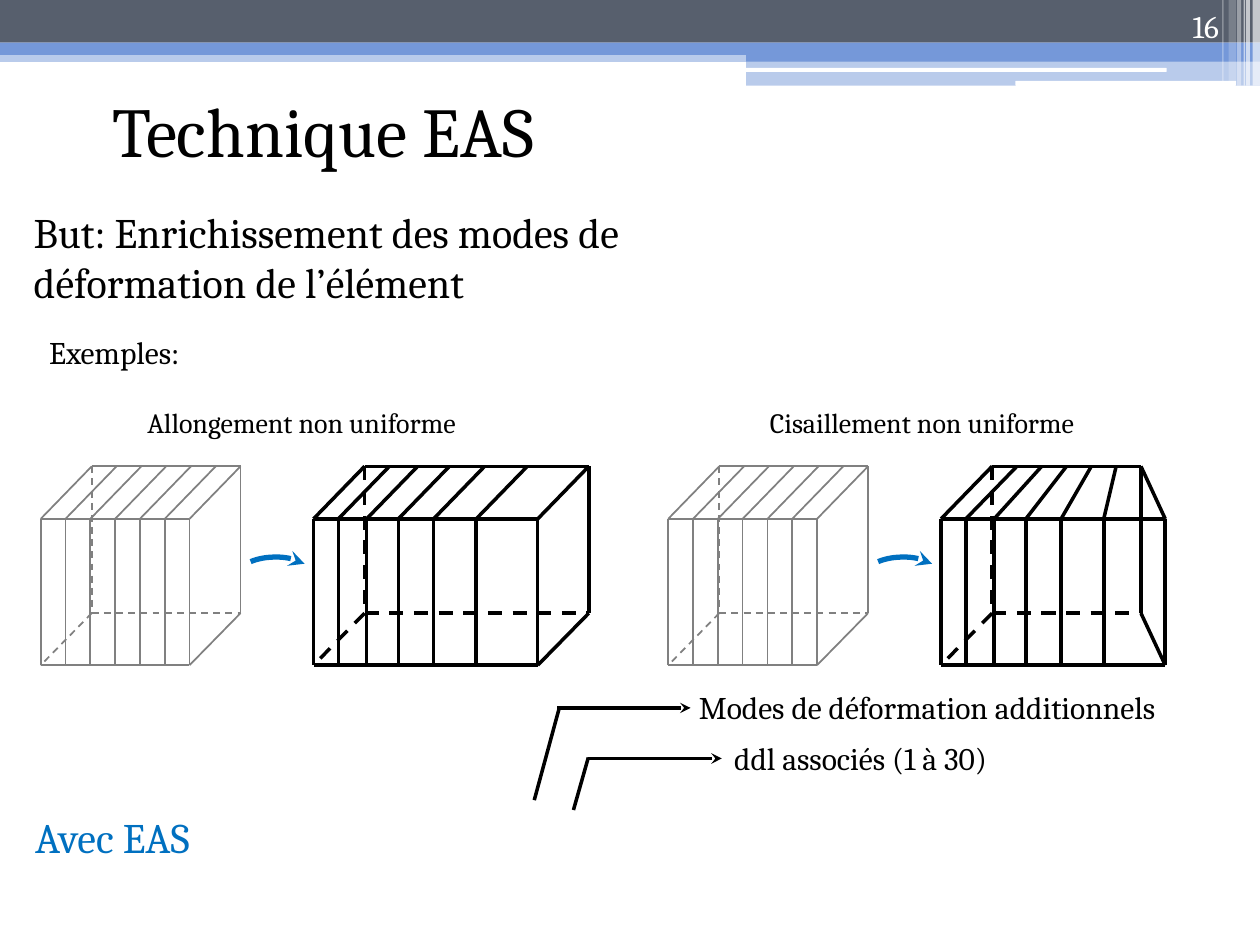
"""Build a slide on how the EAS technique enriches element deformation modes."""
import lxml.etree
import pptx
import pptx.dml.color
import pptx.enum.dml
import pptx.enum.shapes
import pptx.enum.text
import pptx.oxml
import pptx.oxml.ns
import pptx.util

Cm = pptx.util.Cm
Pt = pptx.util.Pt
RGBColor = pptx.dml.color.RGBColor
SHAPE = pptx.enum.shapes.MSO_SHAPE
STRAIGHT = pptx.enum.shapes.MSO_CONNECTOR.STRAIGHT
ANCHOR = pptx.enum.text.MSO_ANCHOR
ALIGN = pptx.enum.text.PP_ALIGN
qn = pptx.oxml.ns.qn

BLACK = RGBColor(0x00, 0x00, 0x00)
WHITE = RGBColor(0xFF, 0xFF, 0xFF)
GREY = RGBColor(0x80, 0x80, 0x80)
SLATE = RGBColor(0x57, 0x5F, 0x6D)
SKY = RGBColor(0x75, 0x98, 0xD9)
BLUE = RGBColor(0x00, 0x70, 0xC0)

presentation = pptx.Presentation()
presentation.slide_width = Cm(25.4)
presentation.slide_height = Cm(19.05)
slide = presentation.slides.add_slide(presentation.slide_layouts[6])


def write(text, left, top, width, height, size=18, color=BLACK,
          align=ALIGN.LEFT, anchor=ANCHOR.TOP):
    box = slide.shapes.add_textbox(Cm(left), Cm(top), Cm(width), Cm(height))
    frame = box.text_frame
    frame.word_wrap = True
    frame.vertical_anchor = anchor
    paragraph = frame.paragraphs[0]
    paragraph.alignment = align
    run = paragraph.add_run()
    run.text = text
    run.font.name = "Cambria"
    run.font.size = Pt(size)
    run.font.color.rgb = color


def stroke(shape, color=BLACK, width=2, dashed=False, arrow=False):
    shape.line.color.rgb = color
    shape.line.width = Pt(width)
    if dashed:
        shape.line.dash_style = pptx.enum.dml.MSO_LINE.DASH
    properties = shape._element.spPr
    if arrow:
        outline = properties.find(qn("a:ln"))
        lxml.etree.SubElement(outline, qn("a:tailEnd"), type="stealth")
    lxml.etree.SubElement(properties, qn("a:effectLst"))


header_bands = [
    (SHAPE.RECTANGLE, 0, 1.02, 25.4, 0.23, SKY, 50),
    (SHAPE.RECTANGLE, 0, 0, 25.4, 0.86, SLATE, 100),
    (SHAPE.RECTANGLE, 0, 0.86, 25.4, 0.25, SKY, 100),
    (SHAPE.RECTANGLE, 15.04, 0.99, 10.36, 0.25, SKY, 100),
    (SHAPE.RECTANGLE, 15.04, 1.22, 10.36, 0.51, SKY, 50),
    (SHAPE.ROUNDED_RECTANGLE, 15.01, 1.37, 8.51, 0.08, WHITE, 100),
    (SHAPE.ROUNDED_RECTANGLE, 20.47, 1.63, 4.45, 0.1, WHITE, 100),
    (SHAPE.RECTANGLE, 25.25, 0, 0.15, 1.73, WHITE, 65),
    (SHAPE.RECTANGLE, 25.12, 0, 0.08, 1.73, WHITE, 65),
    (SHAPE.RECTANGLE, 25.07, 0, 0.03, 1.73, WHITE, 60),
    (SHAPE.RECTANGLE, 24.94, 0, 0.08, 1.73, WHITE, 40),
    (SHAPE.RECTANGLE, 24.77, 0, 0.15, 1.63, WHITE, 20),
    (SHAPE.RECTANGLE, 24.64, 0, 0.03, 1.63, WHITE, 30),
]
for outline, left, top, width, height, color, opacity in header_bands:
    band = slide.shapes.add_shape(outline, Cm(left), Cm(top), Cm(width), Cm(height))
    band.shadow.inherit = False
    band.line.fill.background()
    band.fill.solid()
    band.fill.fore_color.rgb = color
    if opacity < 100:
        tint = band._element.spPr.find(qn("a:solidFill"))[0]
        lxml.etree.SubElement(tint, qn("a:alpha"), val=str(opacity * 1000))

write("16", 22.71, 0, 2.11, 1.02, color=WHITE, align=ALIGN.RIGHT, anchor=ANCHOR.BOTTOM)
write("Technique EAS", 2.01, 1.65, 20.32, 2.26, size=40)
write("But: Enrichissement des modes de déformation de l’élément",
      0.43, 4.04, 14.33, 2.16, size=24)
write("Avec EAS", 0.46, 16.23, 4.37, 1.37, size=24, color=BLUE)
write("ddl associés (1 à 30)", 14.55, 14.78, 6.93, 1.27)
write("Modes de déformation additionnels", 13.84, 13.74, 11.23, 1.27)
write("Exemples:", 0.74, 6.58, 4.39, 1.35)

callouts = [
    (11.86, 15.29, 14.55, 15.29, True),
    (11.86, 15.27, 11.56, 16.33, False),
    (11.28, 14.25, 10.77, 16.13, False),
    (11.23, 14.27, 13.92, 14.27, True),
]
for *ends, arrow in callouts:
    stroke(slide.shapes.add_connector(STRAIGHT, *map(Cm, ends)), arrow=arrow)

BACK_TOP, FRONT_TOP, BACK_BOTTOM, FRONT_BOTTOM = 9.4, 10.46, 12.36, 13.41
DEPTH = 1.03
uniform = [0.5 * step for step in range(7)]
stretched = [0, 0.5, 1.07, 1.71, 2.42, 3.28, 4.52]

examples = [
    ("Allongement non uniforme", 0.82, 2.72, stretched),
    ("Cisaillement non uniforme", 13.47, 15.27, uniform),
]
for caption, start, caption_left, deformed_back in examples:
    write(caption, caption_left, 8.05, 7.57, 1.35, size=16)

    bend = slide.shapes.add_shape(
        SHAPE.ARC, Cm(start + 3.95), Cm(11.23), Cm(1.57), Cm(0.81))
    bend.adjustments[0] = 127.12
    bend.adjustments[1] = 201.18
    bend.fill.background()
    stroke(bend, BLUE, 3, arrow=True)

    blocks = [
        (start, uniform, uniform, GREY, 1),
        (start + 5.5, stretched, deformed_back, BLACK, 2),
    ]
    for left, front_steps, back_steps, color, weight in blocks:
        front = [left + step for step in front_steps]
        back = [left + DEPTH + step for step in back_steps]
        edges = [
            (back[0], BACK_BOTTOM, front[0], FRONT_BOTTOM, True),
            (back[0], BACK_TOP, back[0], BACK_BOTTOM, True),
            (back[0], BACK_BOTTOM, back[-1], BACK_BOTTOM, True),
            (back[0], BACK_TOP, back[-1], BACK_TOP, False),
            (back[-1], BACK_TOP, back[-1], BACK_BOTTOM, False),
            (back[-1], BACK_BOTTOM, front[-1], FRONT_BOTTOM, False),
            (front[0], FRONT_TOP, front[-1], FRONT_TOP, False),
            (front[0], FRONT_BOTTOM, front[-1], FRONT_BOTTOM, False),
        ]
        for front_x, back_x in zip(front, back):
            edges.append((front_x, FRONT_TOP, front_x, FRONT_BOTTOM, False))
            edges.append((back_x, BACK_TOP, front_x, FRONT_TOP, False))
        block = slide.shapes.add_group_shape()
        for *ends, hidden in edges:
            edge = block.shapes.add_connector(STRAIGHT, *map(Cm, ends))
            stroke(edge, color, weight, dashed=hidden)

presentation.save("out.pptx")
